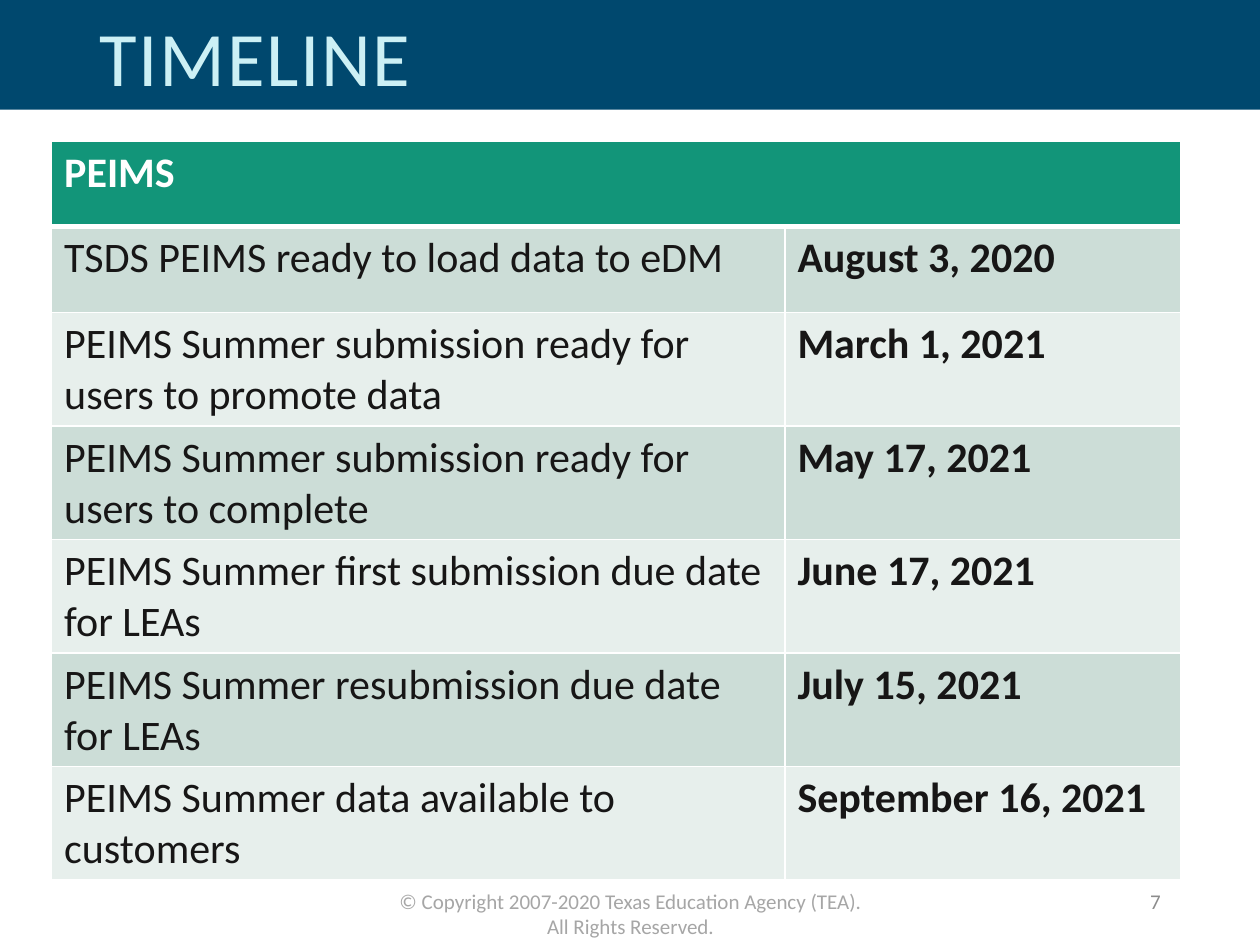
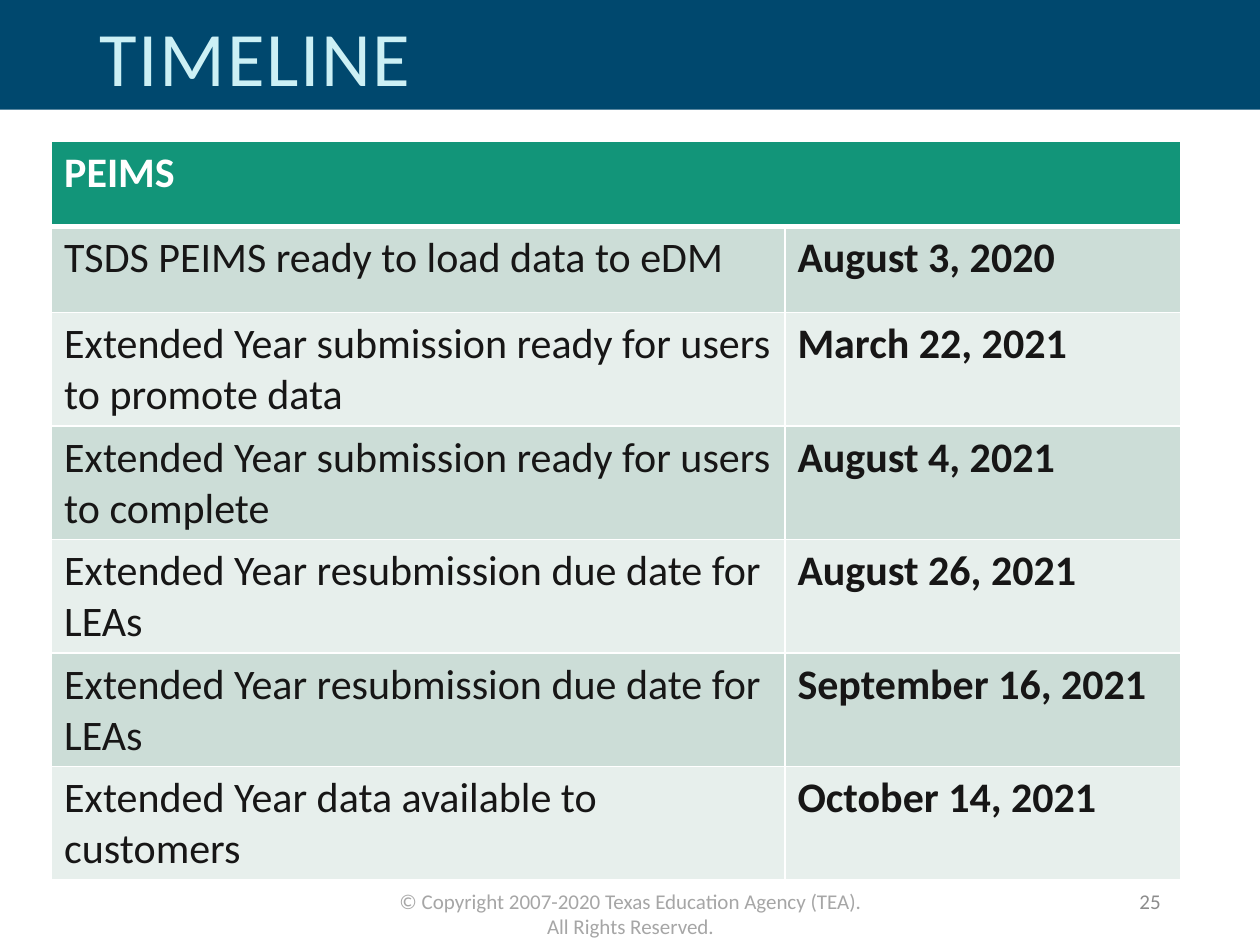
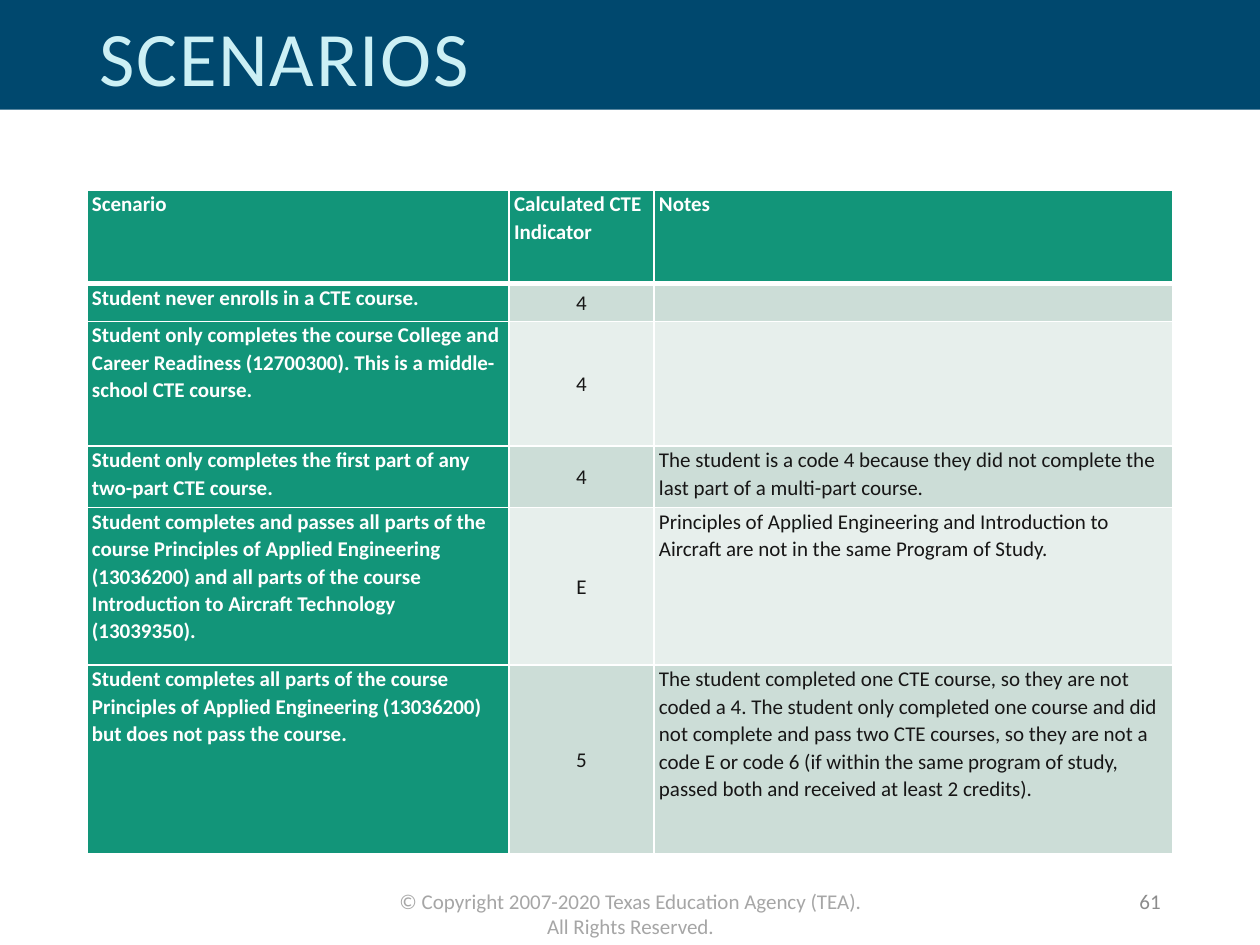
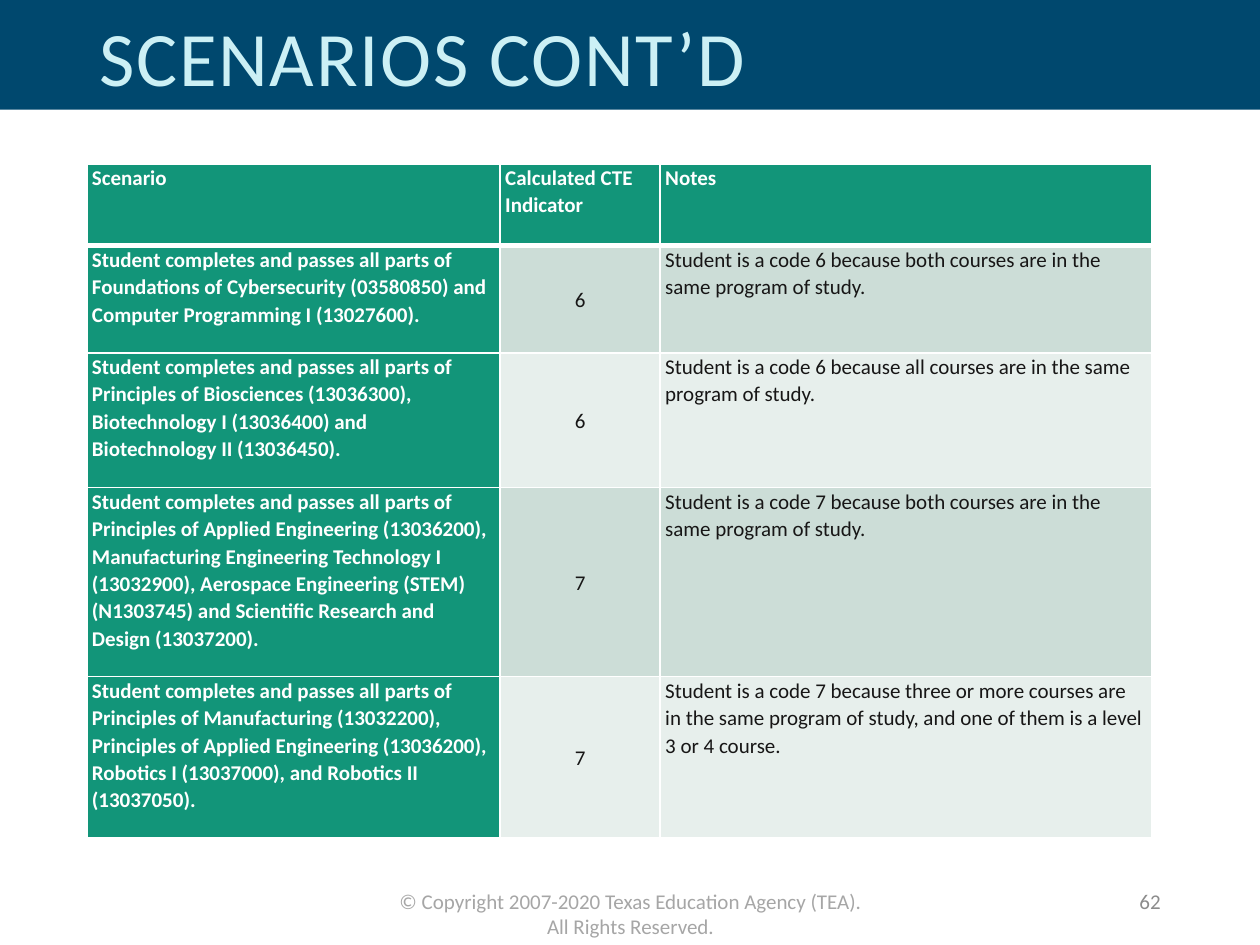
import pptx
import pptx.util
import pptx.dml.color
import pptx.enum.shapes
import pptx.enum.text
import pptx.oxml.ns
from lxml import etree

Inches = pptx.util.Inches
Pt = pptx.util.Pt
qn = pptx.oxml.ns.qn
ALIGN = pptx.enum.text.PP_ALIGN
ANCHOR = pptx.enum.text.MSO_ANCHOR

COLORS = {
    "band": "00486E", "title": "CCF0F5", "foot": "A6A6A6", "page": "8C8C8C",
    "head": "129579", "dark": "CCDDD7", "light": "E7EFEC",
    "ink": "171616", "white": "FFFFFF",
}
COPY = "© Copyright 2007-2020 Texas Education Agency (TEA). All Rights Reserved."


def tint(name):
    return pptx.dml.color.RGBColor.from_string(COLORS[name])


def put(item, values):
    for key, value in values.items():
        setattr(item, key, value)


class Deck:
    """Hold the shared style and the current slide."""

    font = "Calibri"
    tight = {"margin_left": Inches(0.04), "margin_right": Inches(0.04),
             "margin_top": 0, "margin_bottom": 0}
    loose = {"line_spacing": 1.07, "space_after": Pt(8)}

    def __init__(self):
        self.show = pptx.Presentation()
        put(self.show, {"slide_width": Inches(10), "slide_height": Inches(7.5)})

    def start(self, title, page):
        self.slide = self.show.slides.add_slide(self.show.slide_layouts[6])
        self.band()
        foot = self.label(COPY, (3.04, 7, 3.93, 0.3), 12, "foot",
                          {"alignment": ALIGN.CENTER}, ANCHOR.TOP)
        foot.text_frame.auto_size = pptx.enum.text.MSO_AUTO_SIZE.SHAPE_TO_FIT_TEXT
        head = self.label(title, (0.69, 0.05, 8, 0.87), 44, "title", {"line_spacing": 0.9})
        head.text_frame.paragraphs[0].runs[0].font._element.set("spc", "100")
        self.label(str(page), (7.06, 6.95, 2.25, 0.4), 12, "page",
                   {"alignment": ALIGN.RIGHT})

    def band(self):
        kind = pptx.enum.shapes.MSO_SHAPE.RECTANGLE
        bar = self.slide.shapes.add_shape(kind, 0, 0, Inches(10), Inches(0.87))
        bar.shadow.inherit = False
        bar.fill.solid()
        bar.fill.fore_color.rgb = tint("band")
        bar.line.fill.background()

    def words(self, para, text, size, color, bold=False, form=None):
        put(para, form or {})
        if not text:
            etree.SubElement(para._p, qn("a:endParaRPr"), sz=str(size * 100))
            return
        run = para.add_run()
        run.text = text
        put(run.font, {"name": self.font, "size": Pt(size), "bold": bold})
        run.font.color.rgb = tint(color)

    def label(self, text, spot, size, color, form, anchor=ANCHOR.MIDDLE):
        box = self.slide.shapes.add_textbox(*map(Inches, spot))
        put(box.text_frame, {"word_wrap": True, "vertical_anchor": anchor})
        self.words(box.text_frame.paragraphs[0], text, size, color, form=form)
        return box

    def edge(self, cell, row):
        props = cell._tc.get_or_add_tcPr()
        wide = {"L": 1, "R": 1, "T": 3 if row == 1 else 1, "B": 3 if row == 0 else 1}
        for side, width in wide.items():
            line = etree.SubElement(props, qn(f"a:ln{side}"), w=str(int(Pt(width))))
            fill = etree.SubElement(line, qn("a:solidFill"))
            etree.SubElement(fill, qn("a:srgbClr"), val=COLORS["white"])

    def grid(self, spot, cols, rows):
        size = (sum(cols), sum(rows))
        frame = self.slide.shapes.add_table(
            len(rows), len(cols), *map(Inches, spot + size))
        table = frame.table
        put(table, {"first_row": True, "horz_banding": False})
        for col, width in zip(table.columns, cols):
            col.width = Inches(width)
        for row, height in zip(table.rows, rows):
            row.height = Inches(height)
        return table

    def cell(self, table, row, col, text, size, head, bold, form=None, look=None):
        cell = table.cell(row, col)
        self.edge(cell, row)
        cell.fill.solid()
        cell.fill.fore_color.rgb = tint("head" if head else "dark" if row % 2 else "light")
        put(cell, look or {})
        color = "white" if head else "ink"
        self.words(cell.text_frame.paragraphs[0], text, size, color, bold, form)

    def dates(self, items):
        table = self.grid((0.41, 1.12), (5.82, 3.14), (0.68,) * 2 + (0.9,) * 5)
        for row, pair in enumerate([("PEIMS", "")] + items):
            for col, text in enumerate(pair):
                self.cell(table, row, col, text, 24, row == 0, row == 0 or col == 1)
        table.cell(0, 0).merge(table.cell(0, 1))

    def cases(self, top, cols, rows, items):
        table = self.grid((0.69, top), cols, rows)
        names = ("Scenario", "Calculated CTE Indicator", "Notes")
        for row, texts in enumerate([names] + items):
            for col, text in enumerate(texts):
                head = row == 0 or col == 0
                form, look = dict(self.loose), dict(self.tight)
                if row and col == 1:
                    form["alignment"] = ALIGN.CENTER
                    look["vertical_anchor"] = ANCHOR.MIDDLE
                self.cell(table, row, col, text, 12, head, head, form, look)


READY = ("TSDS PEIMS ready to load data to eDM", "August 3, 2020")
SUMMER = [
    READY,
    ("PEIMS Summer submission ready for users to promote data", "March 1, 2021"),
    ("PEIMS Summer submission ready for users to complete", "May 17, 2021"),
    ("PEIMS Summer first submission due date for LEAs", "June 17, 2021"),
    ("PEIMS Summer resubmission due date for LEAs", "July 15, 2021"),
    ("PEIMS Summer data available to customers", "September 16, 2021"),
]
EXTEND = [
    READY,
    ("Extended Year submission ready for users to promote data", "March 22, 2021"),
    ("Extended Year submission ready for users to complete", "August 4, 2021"),
    ("Extended Year resubmission due date for LEAs", "August 26, 2021"),
    ("Extended Year resubmission due date for LEAs", "September 16, 2021"),
    ("Extended Year data available to customers", "October 14, 2021"),
]
FIRST = [
    ("Student never enrolls in a CTE course.", "4", ""),
    ("Student only completes the course College and Career Readiness (12700300). "
     "This is a middle-school CTE course.", "4", ""),
    ("Student only completes the first part of any two-part CTE course.", "4",
     "The student is a code 4 because they did not complete the last part of a "
     "multi-part course."),
    ("Student completes and passes all parts of the course Principles of Applied "
     "Engineering (13036200) and all parts of the course Introduction to Aircraft "
     "Technology (13039350).", "E",
     "Principles of Applied Engineering and Introduction to Aircraft are not in the "
     "same Program of Study."),
    ("Student completes all parts of the course Principles of Applied Engineering "
     "(13036200) but does not pass the course.", "5",
     "The student completed one CTE course, so they are not coded a 4. The student "
     "only completed one course and did not complete and pass two CTE courses, so "
     "they are not a code E or code 6 (if within the same program of study, passed "
     "both and received at least 2 credits)."),
]
PASS = "Student completes and passes all parts of "
BOTH = "Student is a code {} because both courses are in the same program of study."
NEXT = [
    (PASS + "Foundations of Cybersecurity (03580850) and Computer Programming I "
     "(13027600).", "6", BOTH.format(6)),
    (PASS + "Principles of Biosciences (13036300), Biotechnology I (13036400) and "
     "Biotechnology II (13036450).", "6",
     "Student is a code 6 because all courses are in the same program of study."),
    (PASS + "Principles of Applied Engineering (13036200), Manufacturing Engineering "
     "Technology I (13032900), Aerospace Engineering (STEM) (N1303745) and Scientific "
     "Research and Design (13037200).", "7", BOTH.format(7)),
    (PASS + "Principles of Manufacturing (13032200), Principles of Applied Engineering "
     "(13036200), Robotics I (13037000), and Robotics II (13037050).", "7",
     "Student is a code 7 because three or more courses are in the same program of "
     "study, and one of them is a level 3 or 4 course."),
]


def main():
    deck = Deck()
    for page, items in ((7, SUMMER), (25, EXTEND)):
        deck.start("TIMELINE", page)
        deck.dates(items)
    deck.start("SCENARIOS", 61)
    deck.cases(1.51, (3.35, 1.15, 4.12), (0.74, 0.3, 0.99, 0.49, 1.25, 1.5), FIRST)
    deck.start("SCENARIOS CONT’D", 62)
    deck.cases(1.3, (3.28, 1.27, 3.9), (0.65, 0.85, 1.07, 1.5, 1.28), NEXT)
    deck.show.save("out.pptx")


if __name__ == "__main__":
    main()
